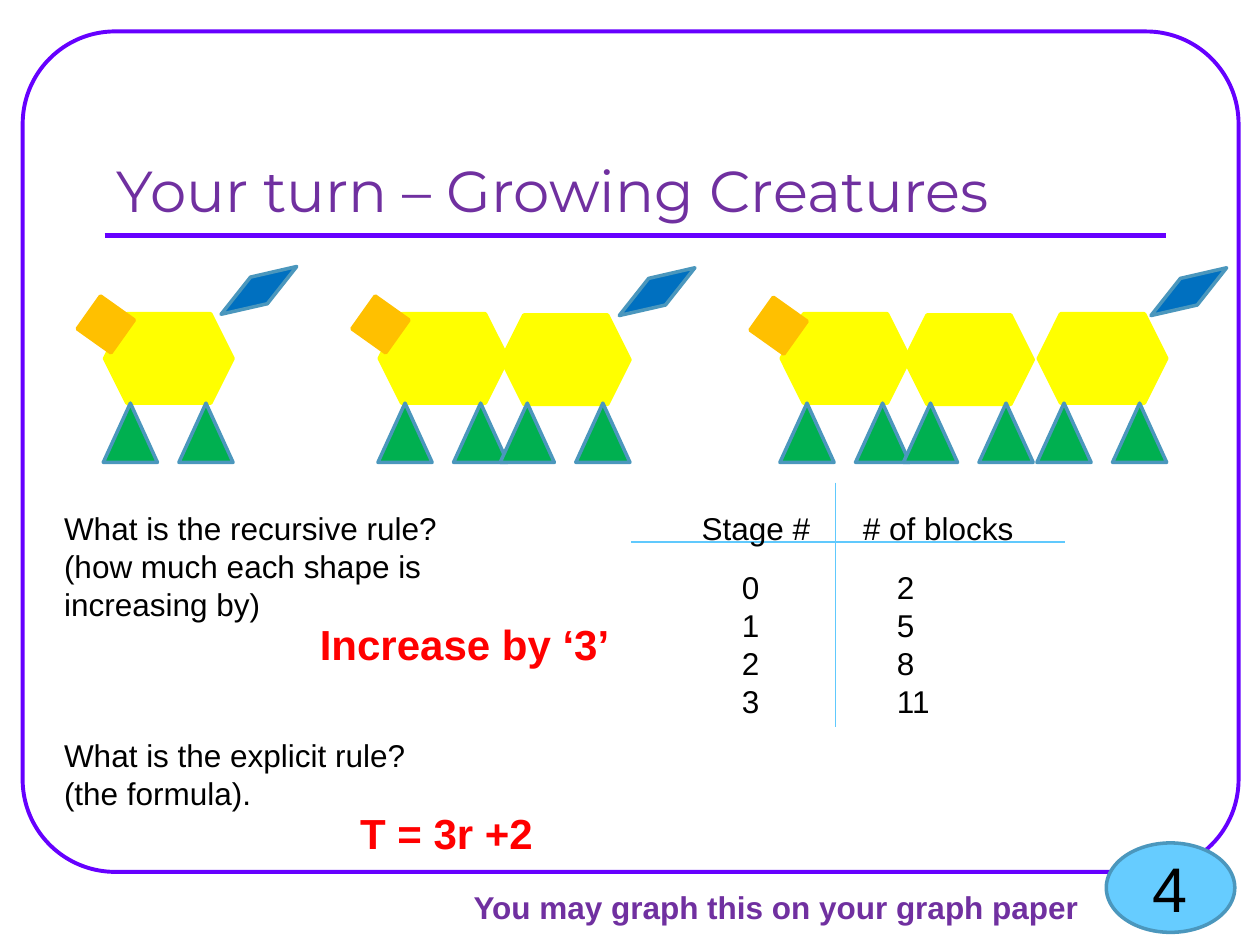
"""Builds the Growing Creatures pattern slide."""
from lxml import etree
from pptx import Presentation
from pptx.dml.color import RGBColor
from pptx.enum import shapes, text
from pptx.oxml import ns
from pptx.util import Inches, Pt

VIOLET = RGBColor(0x66, 0x00, 0xFF)
PURPLE = RGBColor(0x70, 0x30, 0xA0)
YELLOW = RGBColor(0xFF, 0xFF, 0x00)
ORANGE = RGBColor(0xFF, 0xC0, 0x00)
BLUE = RGBColor(0x00, 0x70, 0xC0)
GREEN = RGBColor(0x00, 0xB0, 0x50)
STEEL = RGBColor(0x4B, 0x97, 0xBD)
SKY = RGBColor(0x66, 0xCC, 0xFF)
RULE_BLUE = RGBColor(0x60, 0xC9, 0xFD)
RED = RGBColor(0xFF, 0x00, 0x00)
BLACK = RGBColor(0x00, 0x00, 0x00)

TITLE = "Your turn – Growing Creatures"
QUESTIONS = [
    ["What is the recursive rule?", "(how much each shape is", "increasing by)"],
    ["What is the explicit rule?", "(the formula)."],
]
ANSWERS = [
    ("T = 3r +2", (2.76, 6.36, 1.59, 0.5)),
    ("Increase by ‘3’", (2.44, 4.86, 2.51, 0.5)),
]
FOOTNOTE = "You may graph this on your graph paper"
PAGE = "4"
STAGE_TABLE = [
    ("Stage #", (5.47, 3.99, 1.1, 0.4), ["0", "1", "2", "3"], (5.79, 4.46, 0.34, 1.31)),
    ("# of blocks", (6.75, 3.99, 1.6, 0.4), ["2", "5", "8", "11"], (7.02, 4.46, 0.46, 1.31)),
]
TABLE_LINES = [(5.01, 4.3, 8.45, 4.3), (6.63, 3.83, 6.63, 5.77)]
CREATURES = [
    {"head": (0.68, 2.41), "bodies": [(0.83, 2.49)], "tail": (1.7, 2.18)},
    {"head": (2.86, 2.41), "bodies": [(3.01, 2.49), (3.98, 2.5)], "tail": (4.86, 2.19)},
    {"head": (6.02, 2.42), "bodies": [(6.2, 2.49), (7.18, 2.5), (8.24, 2.49)],
     "tail": (9.08, 2.19)},
]
LEG_OFFSETS = (-0.01, 0.59)
LEG_TOP = 3.2
QUESTION_GAP = Pt(65)


def add_block(slide, kind, box, fill, line, rotation=0, width=2):
    shape = slide.shapes.add_shape(kind, *map(Inches, box))
    shape.shadow.inherit = False
    if fill is None:
        shape.fill.background()
    else:
        shape.fill.solid()
        shape.fill.fore_color.rgb = fill
    shape.line.color.rgb = line
    shape.line.width = Pt(width)
    shape.rotation = rotation
    return shape


def add_line(slide, ends, color, width):
    line = slide.shapes.add_connector(shapes.MSO_CONNECTOR.STRAIGHT, *map(Inches, ends))
    line.line.color.rgb = color
    line.line.width = Pt(width)
    etree.SubElement(line._element.spPr, ns.qn("a:effectLst"))


def write_lines(frame, lines, size=18, color=BLACK, bold=False, font="Arial"):
    for index, line in enumerate(lines):
        paragraph = frame.add_paragraph() if index else frame.paragraphs[0]
        run = paragraph.add_run()
        run.text = line
        run.font.name = font
        run.font.size = Pt(size)
        run.font.bold = bold
        run.font.color.rgb = color


def add_text(slide, box, lines, wrap=False, **style):
    frame = slide.shapes.add_textbox(*map(Inches, box)).text_frame
    frame.word_wrap = wrap
    write_lines(frame, lines, **style)
    return frame


def add_creature(slide, creature):
    kinds = shapes.MSO_SHAPE
    for left, top in creature["bodies"]:
        add_block(slide, kinds.HEXAGON, (left, top, 1.02, 0.71), YELLOW, YELLOW)
        for offset in LEG_OFFSETS:
            leg = (left + offset, LEG_TOP, 0.43, 0.47)
            add_block(slide, kinds.ISOSCELES_TRIANGLE, leg, GREEN, STEEL)
    add_block(slide, kinds.RECTANGLE, (*creature["head"], 0.32, 0.33), ORANGE, ORANGE, 305.4)
    add_block(slide, kinds.DIAMOND, (*creature["tail"], 0.71, 0.25), BLUE, STEEL, 327.7)


def main():
    presentation = Presentation()
    presentation.slide_width, presentation.slide_height = Inches(10), Inches(7.5)
    slide = presentation.slides.add_slide(presentation.slide_layouts[6])

    border = add_block(slide, shapes.MSO_SHAPE.ROUNDED_RECTANGLE, (0.18, 0.25, 9.65, 6.67),
                       None, VIOLET, width=2.25)
    border.adjustments[0] = 0.11
    add_line(slide, (0.83, 1.87, 9.25, 1.87), VIOLET, 3)
    title = add_text(slide, (0.83, 0.58, 8.42, 1.25), [TITLE], wrap=True, size=33,
                     color=PURPLE, font="Montserrat")
    title.vertical_anchor = text.MSO_ANCHOR.BOTTOM

    for creature in CREATURES:
        add_creature(slide, creature)

    badge = add_block(slide, shapes.MSO_SHAPE.OVAL, (8.78, 6.69, 1.02, 0.71), SKY, STEEL)
    write_lines(badge.text_frame, [PAGE], size=36)
    badge.text_frame.vertical_anchor = text.MSO_ANCHOR.MIDDLE
    badge.text_frame.paragraphs[0].alignment = text.PP_ALIGN.CENTER

    questions = add_text(slide, (0.41, 3.99, 8.88, 2.52), sum(QUESTIONS, []), wrap=True)
    questions.paragraphs[len(QUESTIONS[0])].space_before = QUESTION_GAP
    add_text(slide, (3.66, 7, 5.05, 0.4), [FOOTNOTE], color=PURPLE, bold=True)

    for ends in TABLE_LINES:
        add_line(slide, ends, RULE_BLUE, 1)
    for heading, heading_box, values, values_box in STAGE_TABLE:
        add_text(slide, heading_box, [heading], wrap=True)
        add_text(slide, values_box, values)
    for answer, box in ANSWERS:
        add_text(slide, box, [answer], size=24, color=RED, bold=True)

    presentation.save("out.pptx")


if __name__ == "__main__":
    main()
